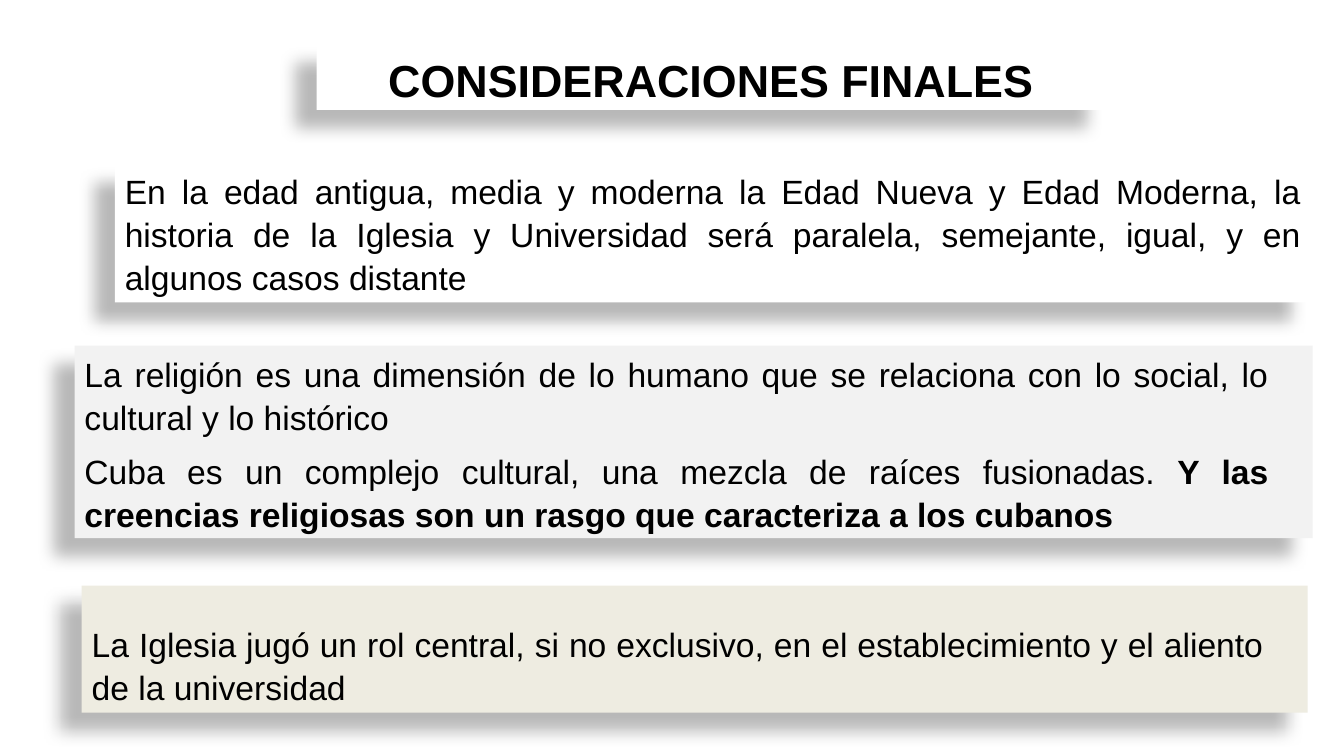
from dataclasses import dataclass

from lxml.etree import SubElement
from pptx import Presentation
from pptx.dml.color import RGBColor as Rgb
from pptx.enum.shapes import MSO_SHAPE as Shape
from pptx.enum.text import MSO_ANCHOR as Anchor, MSO_AUTO_SIZE as AutoSize, PP_ALIGN as Align
from pptx.oxml.ns import qn
from pptx.util import Inches, Pt


@dataclass(frozen=True)
class Theme:
    font: str = "Arial"
    ink: str = "000000"
    white: str = "FFFFFF"
    grey: str = "F2F2F2"
    cream: str = "EEECE1"
    title_size: int = 32
    body_size: int = 24
    line_spacing: float = 1.07
    space_after: int = 8
    shadow_alpha: int = 28
    shadow_blur: float = 11.8
    shadow_distance: float = 19.7
    shadow_angle: int = 141


THEME = Theme()
WIDTH, HEIGHT = Inches(13.33), Inches(7.5)

TITLE = "CONSIDERACIONES FINALES"
TITLE_AREA = (23.56, 5.87, 58.81, 8.67)

STATEMENTS = [
    ((8.55, 21.6, 88.97, 18.4), THEME.white, 0.05, 0.1, [
        [("En la edad antigua, media y moderna la Edad Nueva y Edad Moderna, la "
          "historia de la Iglesia y Universidad será paralela, semejante, igual, "
          "y en algunos casos distante", False)],
    ]),
    ((5.55, 45.73, 92.12, 25.47), THEME.grey, 0.05, 0.44, [
        [("La religión es una dimensión de lo humano que se relaciona con lo "
          "social, lo cultural y lo histórico", False)],
        [("Cuba es un complejo cultural, una mezcla de raíces fusionadas. ", False),
         ("Y las creencias religiosas son un rasgo que caracteriza a los cubanos", True)],
    ]),
    ((6.08, 77.47, 91.22, 16.8), THEME.cream, 0.35, 0.44, [
        [("La Iglesia jugó un rol central, si no exclusivo, en el establecimiento "
          "y el aliento de la universidad", False)],
    ]),
]


def box(area):
    left, top, width, height = area
    return (int(WIDTH * left / 100), int(HEIGHT * top / 100),
            int(WIDTH * width / 100), int(HEIGHT * height / 100))


def cast_shadow(panel):
    panel.shadow.inherit = False
    effects = panel._element.spPr.find(qn("a:effectLst"))
    shadow = SubElement(effects, qn("a:outerShdw"), {
        "blurRad": str(Pt(THEME.shadow_blur)),
        "dist": str(Pt(THEME.shadow_distance)),
        "dir": str(THEME.shadow_angle * 60000),
        "algn": "ctr",
        "rotWithShape": "0",
    })
    tint = SubElement(shadow, qn("a:srgbClr"), val=THEME.ink)
    SubElement(tint, qn("a:alpha"), val=str(THEME.shadow_alpha * 1000))


def style_panel(panel, colour):
    panel.fill.solid()
    panel.fill.fore_color.rgb = Rgb.from_string(colour)
    panel.line.fill.background()
    cast_shadow(panel)


def write(panel, paragraphs, size, align, left=0.1, top=0.05, right=0.1):
    frame = panel.text_frame
    frame.word_wrap = True
    frame.auto_size = AutoSize.NONE
    frame.vertical_anchor = Anchor.TOP
    frame.margin_left, frame.margin_right = Inches(left), Inches(right)
    frame.margin_top, frame.margin_bottom = Inches(top), Inches(0.05)
    for index, runs in enumerate(paragraphs):
        paragraph = frame.add_paragraph() if index else frame.paragraphs[0]
        paragraph.alignment = align
        paragraph.line_spacing = THEME.line_spacing
        paragraph.space_before = Pt(0)
        paragraph.space_after = Pt(THEME.space_after)
        for words, bold in runs:
            run = paragraph.add_run()
            run.text = words
            run.font.name = THEME.font
            run.font.size = Pt(size)
            run.font.bold = bold
            run.font.color.rgb = Rgb.from_string(THEME.ink)


def add_title(slide):
    title = slide.shapes.title
    title.left, title.top, title.width, title.height = box(TITLE_AREA)
    style_panel(title, THEME.white)
    write(title, [[(TITLE, True)]], THEME.title_size, Align.LEFT, left=0.71)


def add_statement(slide, area, colour, top, right, paragraphs):
    statement = slide.shapes.add_shape(Shape.RECTANGLE, *box(area))
    style_panel(statement, colour)
    write(statement, paragraphs, THEME.body_size, Align.JUSTIFY, top=top, right=right)


def main():
    deck = Presentation()
    deck.slide_width, deck.slide_height = WIDTH, HEIGHT
    slide = deck.slides.add_slide(deck.slide_layouts.get_by_name("Title Only"))
    add_title(slide)
    for statement in STATEMENTS:
        add_statement(slide, *statement)
    deck.save("out.pptx")


if __name__ == "__main__":
    main()
